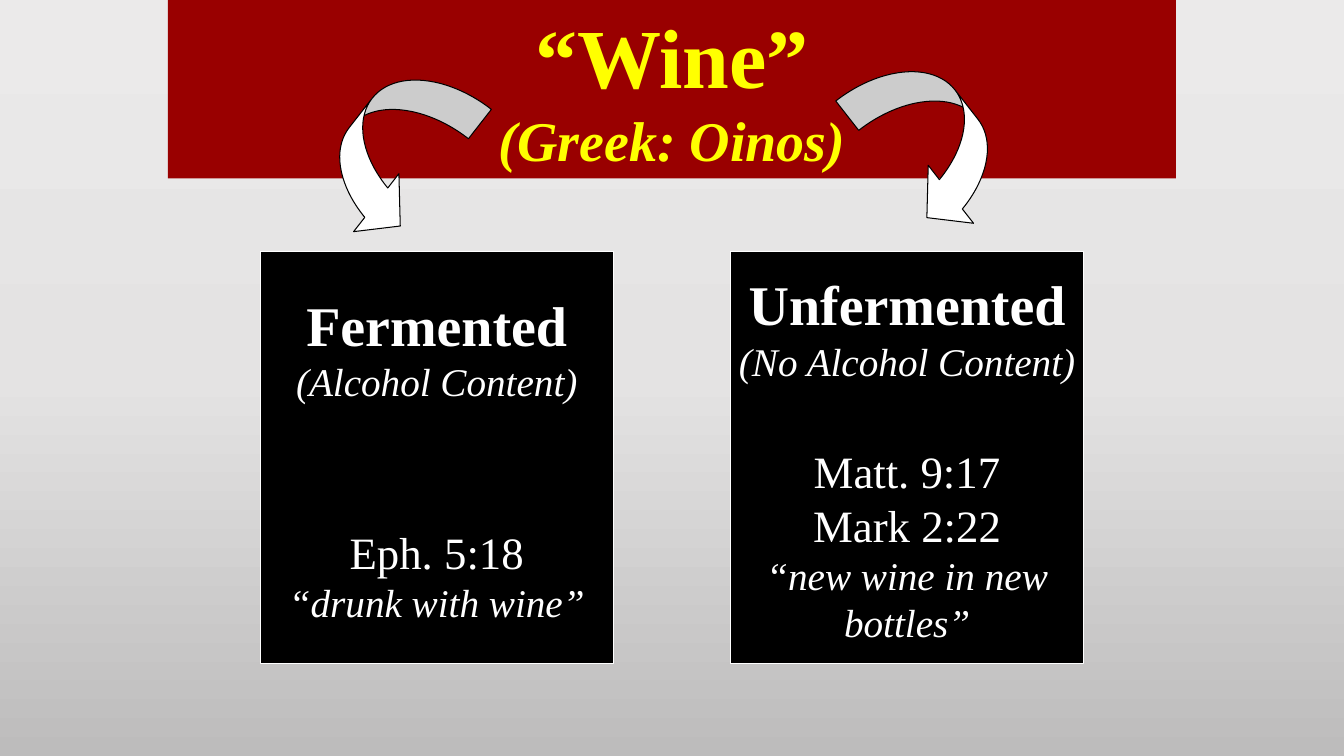
from copy import deepcopy

from pptx import Presentation
from pptx.dml.color import RGBColor
from pptx.enum.shapes import MSO_SHAPE
from pptx.enum.text import MSO_ANCHOR, PP_ALIGN
from pptx.util import Pt

RED = RGBColor(0x99, 0x00, 0x00)
YELLOW = RGBColor(0xFF, 0xFF, 0x00)
BLACK = RGBColor(0x00, 0x00, 0x00)
WHITE = RGBColor(0xFF, 0xFF, 0xFF)
LIGHT = RGBColor(0xEB, 0xEA, 0xEA)
MIDDLE = RGBColor(0xE4, 0xE3, 0xE3)
DARK = RGBColor(0xBD, 0xBC, 0xBC)

# Text formats
TITLE = {"size": Pt(60), "bold": True}
GREEK = {"size": Pt(40), "bold": True, "italic": True}
HEAD = {"size": Pt(40), "bold": True}
NOTE = {"size": Pt(28), "italic": True}
VERSE = {"size": Pt(32)}


def add_form(kind, left, top, width, height, fill, line=None):
    form = slide.shapes.add_shape(kind, Pt(left), Pt(top), Pt(width), Pt(height))
    form.shadow.inherit = False
    form.fill.solid()
    form.fill.fore_color.rgb = fill
    if line is None:
        form.line.fill.background()
    else:
        form.line.color.rgb = line
        form.line.width = Pt(0.75)
    return form


def write(form, lines, color, anchor, wrap):
    frame = form.text_frame
    frame.word_wrap = wrap
    frame.vertical_anchor = anchor
    for num, (text, style, gap) in enumerate(lines):
        para = frame.add_paragraph() if num else frame.paragraphs[0]
        para.alignment = PP_ALIGN.CENTER
        para.space_before = Pt(gap)
        run = para.add_run()
        run.text = text
        run.font.name = "Times New Roman"
        run.font.color.rgb = color
        for key, value in style.items():
            setattr(run.font, key, value)


deck = Presentation()
deck.slide_width, deck.slide_height = Pt(960), Pt(540)
slide = deck.slides.add_slide(deck.slide_layouts[6])

# Background: three grey stops from top to bottom
back = slide.background.fill
back.gradient()
back.gradient_angle = 270
stops = slide.background._cSld.xpath(".//a:gsLst")[0]
stops.append(deepcopy(stops[-1]))
for stop, color, place in zip(back.gradient_stops, (LIGHT, MIDDLE, DARK), (0, 0.5, 1)):
    stop.color.rgb = color
    stop.position = place

# Title band
band = add_form(MSO_SHAPE.RECTANGLE, 120, 0, 720, 127.4, RED)
write(band, [("“Wine”", TITLE, 0), ("(Greek: Oinos)", GREEK, 0)],
      YELLOW, MSO_ANCHOR.TOP, True)

# Two kinds of wine
panels = [
    (186, [("Fermented", HEAD, 0), ("(Alcohol Content)", NOTE, 0),
           ("Eph. 5:18", VERSE, 86), ("“drunk with wine”", NOTE, 0)]),
    (522, [("Unfermented", HEAD, 0), ("(No Alcohol Content)", NOTE, 0),
           ("Matt. 9:17", VERSE, 43), ("Mark 2:22", VERSE, 0),
           ("“new wine in new", NOTE, 0), ("bottles”", NOTE, 0)]),
]
for left, lines in panels:
    panel = add_form(MSO_SHAPE.RECTANGLE, left, 180, 252, 294, BLACK, WHITE)
    write(panel, lines, WHITE, MSO_ANCHOR.MIDDLE, False)

# Curved arrows, the second one mirrored
for left, top, turn, flip in ((246, 42, 38, "0"), (630, 36, 322, "1")):
    arrow = add_form(MSO_SHAPE.CURVED_RIGHT_ARROW, left, top, 72, 132, WHITE, BLACK)
    arrow.rotation = turn
    arrow._element.spPr.xfrm.set("flipH", flip)
    for num, value in enumerate((0.37, 0.73, 0.33)):
        arrow.adjustments[num] = value

deck.save("out.pptx")
